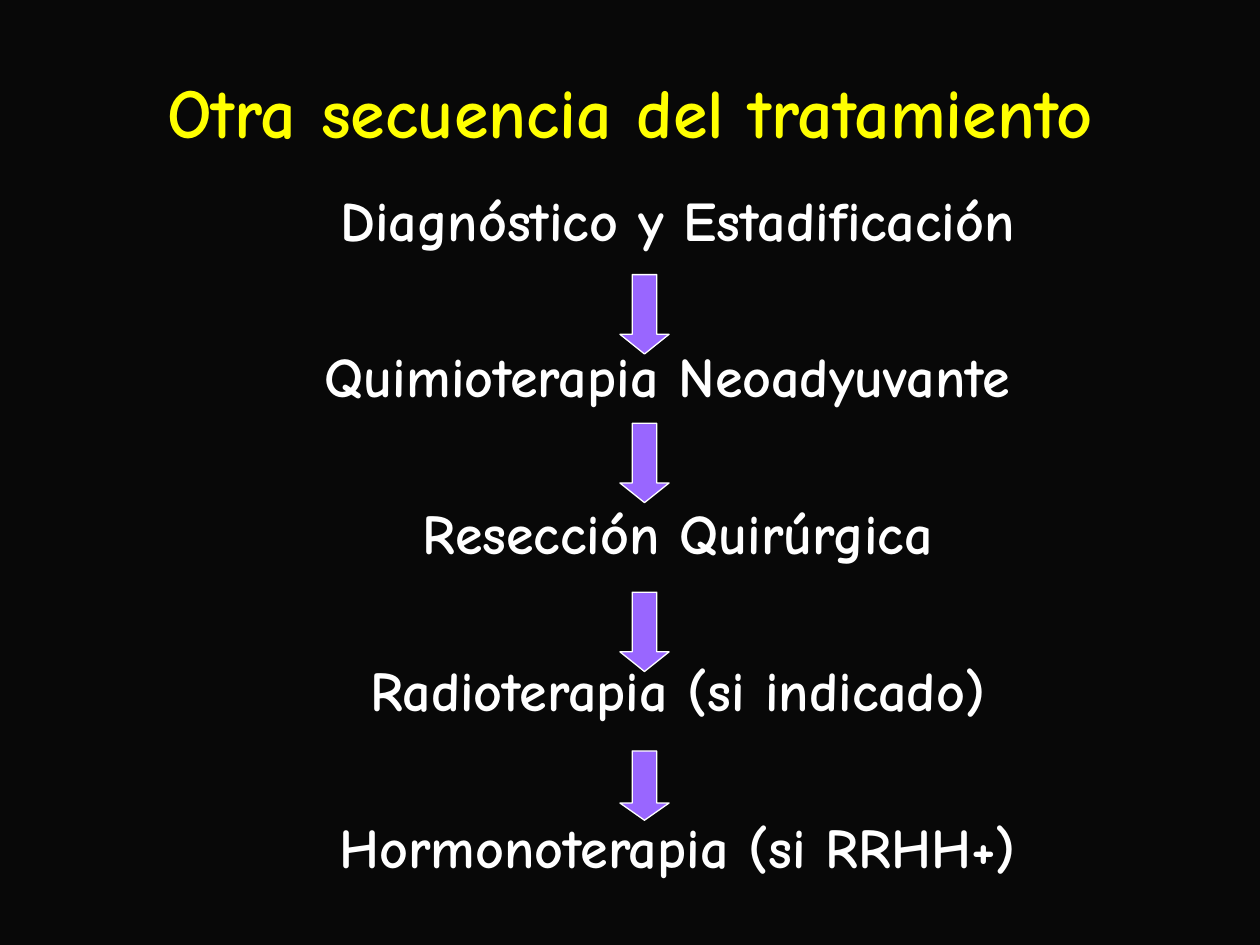
import pptx
import pptx.dml.color
import pptx.enum.shapes
import pptx.enum.text
import pptx.util
from pptx.util import Inches


def rgb(value):
    return pptx.dml.color.RGBColor.from_string(value)


class Deck:
    FONT = {"name": "Comic Neue", "bold": True}
    BACKGROUND = "080808"
    WHITE = "FFFFFF"
    YELLOW = "FFFF00"
    PURPLE = "9966FF"

    def __init__(self):
        self.prs = pptx.Presentation()
        self.prs.slide_width = Inches(10)
        self.prs.slide_height = Inches(7.5)
        self.s = self.prs.slides.add_slide(self.prs.slide_layouts[6])
        fill = self.s.background.fill
        fill.solid()
        fill.fore_color.rgb = rgb(self.BACKGROUND)

    def text(self, box, lines, size, color, anchor, gap=0):
        sp = self.s.shapes.add_textbox(*map(Inches, box))
        tf = sp.text_frame
        tf.word_wrap = True
        tf.vertical_anchor = anchor
        for i, line in enumerate(lines):
            p = tf.add_paragraph() if i else tf.paragraphs[0]
            p.alignment = pptx.enum.text.PP_ALIGN.CENTER
            p.space_before = pptx.util.Pt(gap if i else 0)
            r = p.add_run()
            r.text = line
            for name, value in {**self.FONT, "size": pptx.util.Pt(size)}.items():
                setattr(r.font, name, value)
            r.font.color.rgb = rgb(color)

    def down_arrow(self, left, top, width, height):
        sp = self.s.shapes.add_shape(
            pptx.enum.shapes.MSO_SHAPE.DOWN_ARROW,
            *map(Inches, (left, top, width, height)))
        sp.shadow.inherit = False
        sp.adjustments[0] = 0.5
        # Same head length on every arrow
        sp.adjustments[1] = round(0.25 * height / width, 2)
        sp.adjustments[1] = 0.4 if height > 0.6 else 0.35
        sp.fill.solid()
        sp.fill.fore_color.rgb = rgb(self.PURPLE)
        sp.line.color.rgb = rgb(self.WHITE)
        sp.line.width = pptx.util.Pt(0.75)


def main():
    deck = Deck()
    anchors = pptx.enum.text.MSO_ANCHOR

    # Title
    deck.text((0, 0.25, 10, 1.25), ["Otra secuencia del tratamiento"],
              40, deck.YELLOW, anchors.MIDDLE)

    # Treatment steps
    steps = [
        "Diagnóstico y Estadificación",
        "Quimioterapia Neoadyuvante ",
        "Resección Quirúrgica",
        "Radioterapia (si indicado)",
        "Hormonoterapia (si RRHH+)",
    ]
    deck.text((0.96, 1.42, 8.84, 6.03), steps, 32, deck.WHITE, anchors.TOP, gap=51.2)

    # Arrows between the steps
    for top, height in [(2.18, 0.63), (3.36, 0.63), (4.7, 0.63), (5.96, 0.55)]:
        deck.down_arrow(4.92, top, 0.39, height)

    deck.prs.save("out.pptx")


if __name__ == "__main__":
    main()
